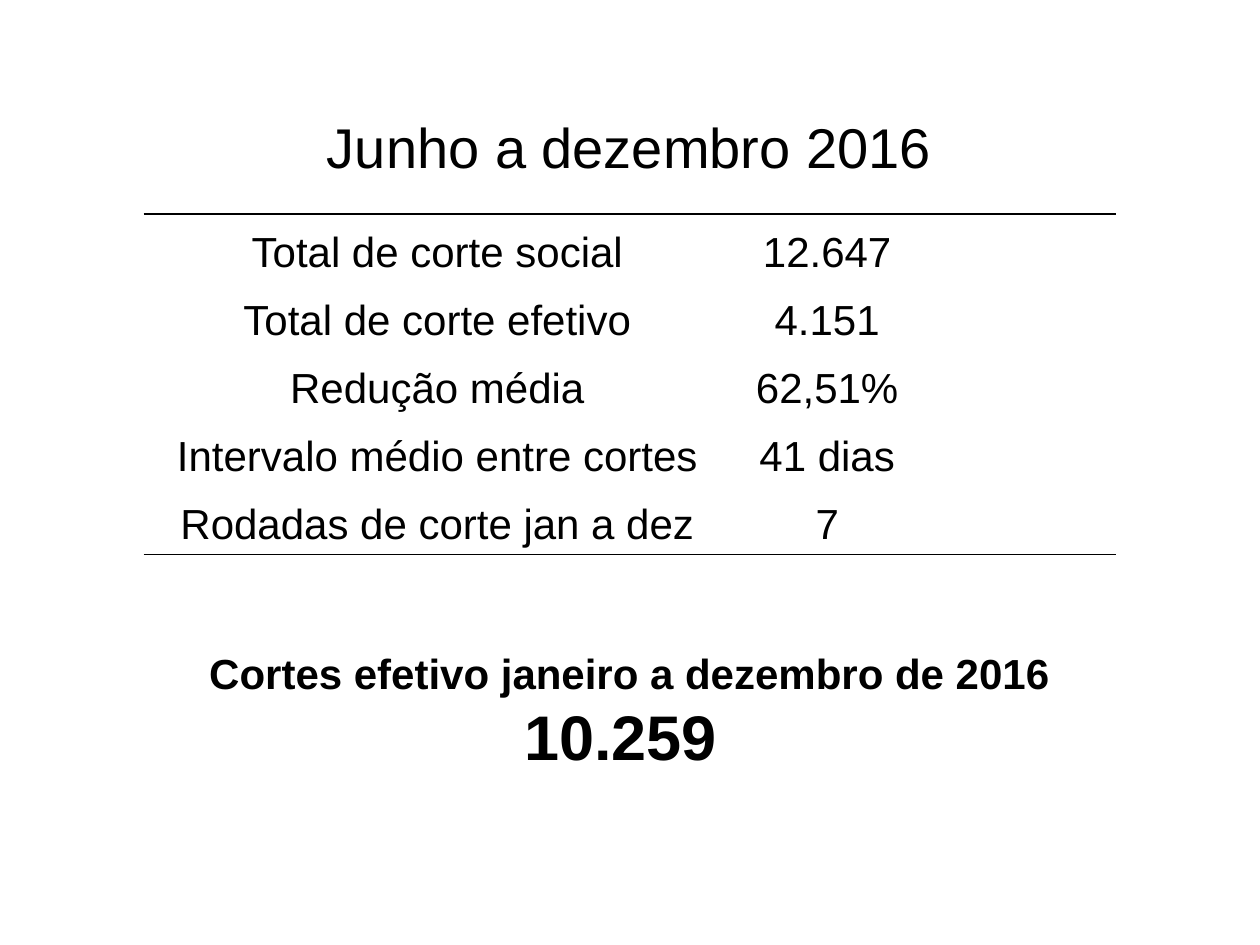
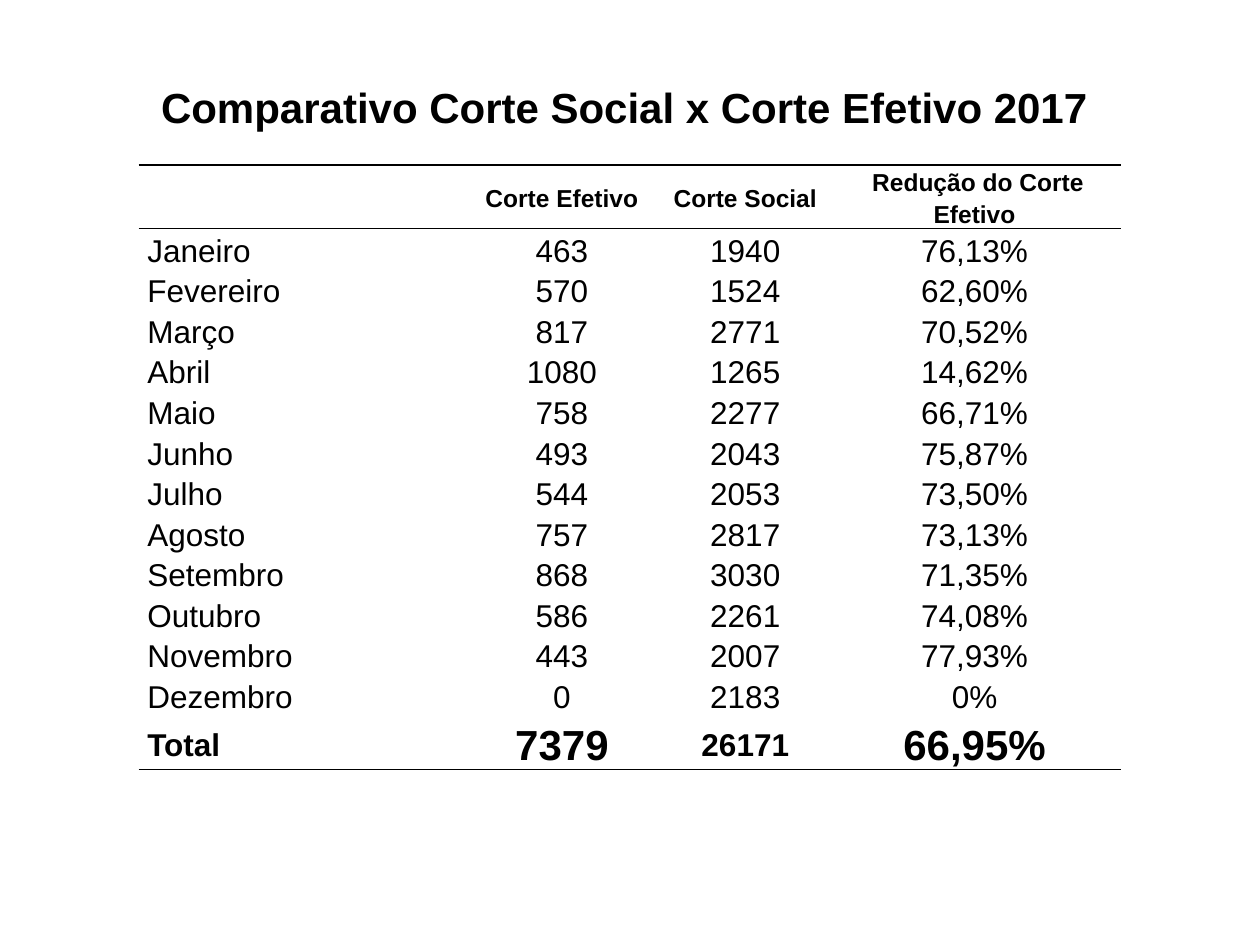
from lxml import etree
from pptx import Presentation
from pptx.dml.color import RGBColor
from pptx.enum.text import MSO_ANCHOR, MSO_AUTO_SIZE, PP_ALIGN
from pptx.oxml.ns import qn
from pptx.util import Inches, Pt

LEFT, CENTER = PP_ALIGN.LEFT, PP_ALIGN.CENTER
TOP, MIDDLE, BOTTOM = MSO_ANCHOR.TOP, MSO_ANCHOR.MIDDLE, MSO_ANCHOR.BOTTOM
NO_AUTOFIT = MSO_AUTO_SIZE.NONE
COLORS = {"text": "000000", "rule": "000000"}
FONT = "Arial"
TITLE_ONLY = 5
PLAIN_TABLE_STYLE = "{2D5ABB26-0587-4C30-8999-92F81FD0307C}"

SUMMARY_2016 = [
    ("Total de corte social", " 12.647 "),
    ("Total de corte efetivo", " 4.151 "),
    ("Redução média", "62,51%"),
    ("Intervalo médio entre cortes", "41 dias"),
    ("Rodadas de corte jan a dez", "7"),
]
HEADER_2017 = ("", "Corte Efetivo", "Corte Social", " Redução do Corte Efetivo")
MONTHS_2017 = [
    ("Janeiro", "463", "1940", "76,13%"),
    ("Fevereiro", "570", "1524", "62,60%"),
    ("Março", "817", "2771", "70,52%"),
    ("Abril", "1080", "1265", "14,62%"),
    ("Maio", "758", "2277", "66,71%"),
    ("Junho", "493", "2043", "75,87%"),
    ("Julho", "544", "2053", "73,50%"),
    ("Agosto", "757", "2817", "73,13%"),
    ("Setembro", "868", "3030", "71,35%"),
    ("Outubro", "586", "2261", "74,08%"),
    ("Novembro", "443", "2007", "77,93%"),
    ("Dezembro", "0", "2183", "0%"),
]
TOTAL_2017 = ("Total", "7379", "26171", "66,95%")


def write(paragraph, text, size, bold=False, align=CENTER, spacing=1.0):
    paragraph.alignment = align
    paragraph.line_spacing = spacing
    run = paragraph.add_run()
    run.text = text
    run.font.name = FONT
    run.font.size = Pt(size)
    run.font.bold = bold
    run.font.color.rgb = RGBColor.from_string(COLORS["text"])


def add_titled_slide(prs, text, box, size, bold=False):
    slide = prs.slides.add_slide(prs.slide_layouts[TITLE_ONLY])
    title = slide.shapes.title
    title.left, title.top, title.width, title.height = map(Inches, box)
    frame = title.text_frame
    frame.auto_size = NO_AUTOFIT
    frame.word_wrap = False
    frame.vertical_anchor = MIDDLE
    write(frame.paragraphs[0], text, size, bold)
    return slide


def add_plain_table(slide, left, top, widths, heights):
    """Add a table without style, fill or borders."""
    frame = slide.shapes.add_table(
        len(heights), len(widths), Inches(left), Inches(top),
        Inches(sum(widths)), Inches(sum(heights)))
    for style in frame.element.iter(qn("a:tableStyleId")):
        style.text = PLAIN_TABLE_STYLE
    table = frame.table
    table.first_row = table.horz_banding = False
    for column, width in zip(table.columns, widths):
        column.width = Inches(width)
    for row, height in zip(table.rows, heights):
        row.height = Inches(height)
    for cell in table.iter_cells():
        cell.fill.background()
    return table


def fill_cell(cell, text, size, margins, anchor, **text_format):
    """Write into a cell; margins run left, top, right, bottom."""
    (cell.margin_left, cell.margin_top,
     cell.margin_right, cell.margin_bottom) = map(Inches, margins)
    cell.vertical_anchor = anchor
    if text:
        write(cell.text_frame.paragraphs[0], text, size, **text_format)


def rule_row(row, *edges):
    """Draw rules on the named edges (lnT, lnB) of every cell in a row."""
    for cell in row.cells:
        properties = cell._tc.get_or_add_tcPr()
        for edge in sorted(edges):  # lnT must end up before lnB
            line = etree.Element(qn(f"a:{edge}"), w=str(Pt(1)))
            fill = etree.SubElement(line, qn("a:solidFill"))
            etree.SubElement(fill, qn("a:srgbClr"), val=COLORS["rule"])
            properties.insert(0, line)


def add_year_total(slide, label, total):
    box = slide.shapes.add_textbox(
        Inches(0.94), Inches(5.09), Inches(8.11), Inches(1.51))
    frame = box.text_frame
    frame.word_wrap = True
    write(frame.paragraphs[0], label, 24, bold=True)
    write(frame.add_paragraph(), total, 36, bold=True)


def build_summary_2016(prs):
    slide = add_titled_slide(
        prs, "Junho a dezembro 2016", (2.48, 0.84, 5.03, 0.64), 32)
    table = add_plain_table(slide, 1.14, 1.7, [4.66, 1.53, 1.53],
                            [0.54] * len(SUMMARY_2016))
    for r, entry in enumerate(SUMMARY_2016):
        for c, text in enumerate(entry):
            fill_cell(table.cell(r, c), text, 24,
                      (0.01, 0.01, 0.01, 0.05), BOTTOM)
    rule_row(table.rows[0], "lnT")
    rule_row(table.rows[len(SUMMARY_2016) - 1], "lnB")
    add_year_total(slide, "Cortes efetivo janeiro a dezembro de 2016", "10.259 ")


def build_comparison_2017(prs):
    slide = add_titled_slide(
        prs, "Comparativo Corte Social x Corte Efetivo 2017",
        (1.14, 0.6, 7.63, 0.5), 24, bold=True)
    entries = [HEADER_2017, *MONTHS_2017, TOTAL_2017]
    last = len(entries) - 1
    table = add_plain_table(slide, 1.1, 1.31, [2.56, 1.6, 1.31, 2.33],
                            [0.5] + [0.32] * len(MONTHS_2017) + [0.43])
    for r, entry in enumerate(entries):
        outer = r in (0, last)
        for c, text in enumerate(entry):
            if r == 0:
                size = 14
            else:
                size = 24 if r == last and c in (1, 3) else 18
            fill_cell(table.cell(r, c), text, size, (0.07, 0, 0.07, 0),
                      MIDDLE if outer else TOP, bold=outer,
                      align=CENTER if c else LEFT, spacing=1.15)
    rule_row(table.rows[0], "lnT", "lnB")
    rule_row(table.rows[last], "lnB")


def main():
    prs = Presentation()
    prs.slide_width, prs.slide_height = Inches(10), Inches(7.5)
    build_summary_2016(prs)
    build_comparison_2017(prs)
    prs.save("out.pptx")


if __name__ == "__main__":
    main()
